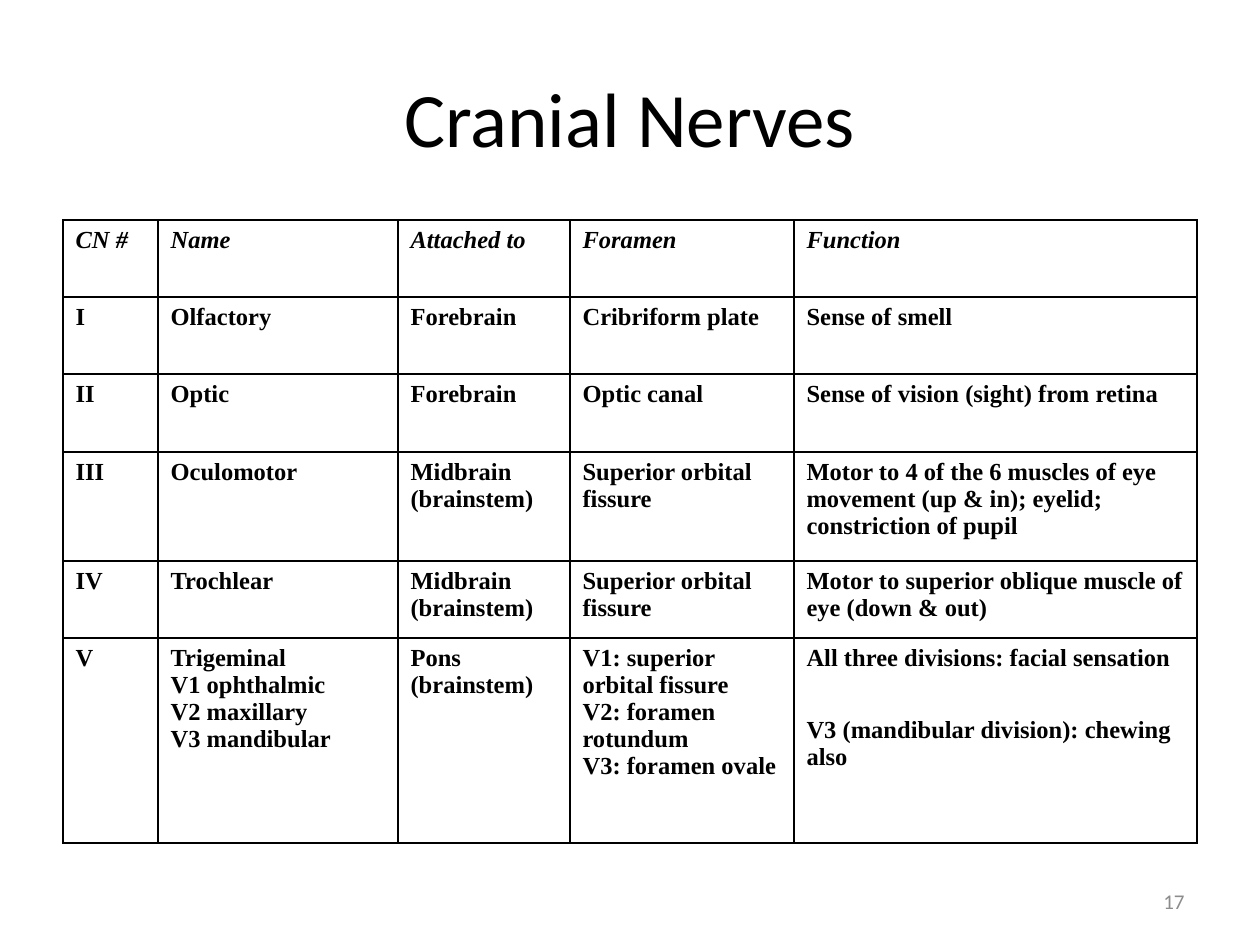
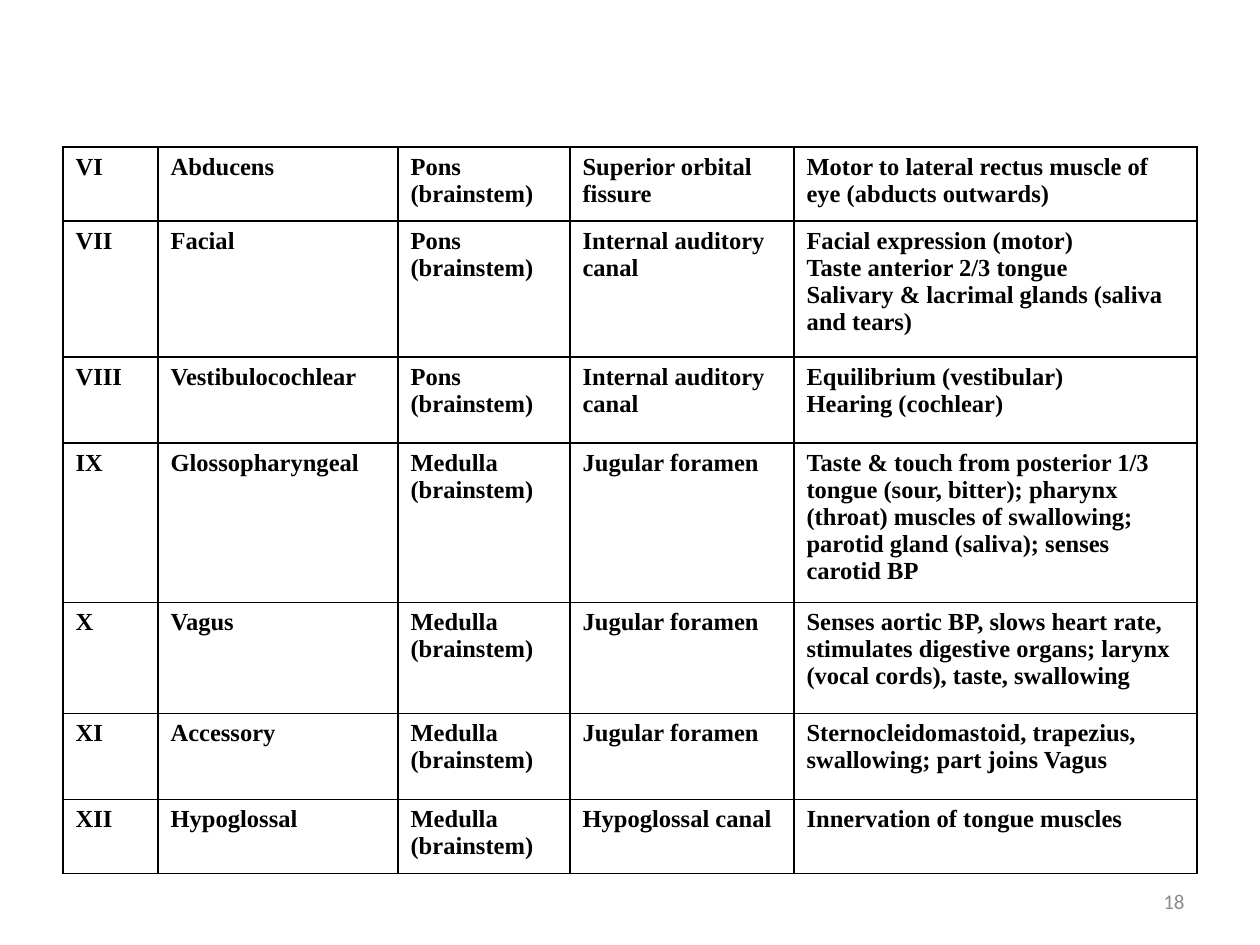
import pptx
import pptx.util
import pptx.dml.color
import pptx.enum.text
import pptx.oxml.ns
import lxml.etree

BLACK = pptx.dml.color.RGBColor(0x00, 0x00, 0x00)
GREY = pptx.dml.color.RGBColor(0x8C, 0x8C, 0x8C)
SANS = "Calibri"
SERIF = "Times New Roman"
ALIGN = pptx.enum.text.PP_ALIGN
MIDDLE = pptx.enum.text.MSO_ANCHOR.MIDDLE

SCALE = 914400 / 126  # EMU in one px
WIDE, HIGH = 1260, 945
LEFT = 63
COLS = [95, 240, 172, 224, 403]


def px(num):
    return pptx.util.Emu(round(num * SCALE))


class Deck:
    def __init__(self):
        self.show = pptx.Presentation()
        self.show.slide_width = px(WIDE)
        self.show.slide_height = px(HIGH)
        self.slide = None

    def page(self, num):
        self.slide = self.show.slides.add_slide(self.show.slide_layouts[6])
        self.text(num, (903, 876, 294, 50), 12, GREY, ALIGN.RIGHT)

    def title(self, words):
        self.text(words, (LEFT, 38, 1134, 158), 44, BLACK, ALIGN.CENTER)

    def run(self, para, words, font, size, color, bold=False, slant=False):
        run = para.add_run()
        run.text = words
        run.font.name = font
        run.font.size = pptx.util.Pt(size)
        run.font.color.rgb = color
        run.font.bold = bold
        run.font.italic = slant

    def text(self, words, place, size, color, align):
        frame = self.slide.shapes.add_textbox(*map(px, place)).text_frame
        frame.word_wrap = True
        frame.vertical_anchor = MIDDLE
        para = frame.paragraphs[0]
        para.alignment = align
        self.run(para, words, SANS, size, color)

    def border(self, cell):
        props = cell._tc.get_or_add_tcPr()
        for side in ("lnL", "lnR", "lnT", "lnB"):
            line = lxml.etree.SubElement(
                props, pptx.oxml.ns.qn("a:" + side), w="12700")
            fill = lxml.etree.SubElement(line, pptx.oxml.ns.qn("a:solidFill"))
            lxml.etree.SubElement(
                fill, pptx.oxml.ns.qn("a:srgbClr"), val=str(BLACK))

    def cell(self, cell, words, slant):
        self.border(cell)
        cell.fill.background()
        frame = cell.text_frame
        for i, line in enumerate(words.split("\n")):
            para = frame.add_paragraph() if i else frame.paragraphs[0]
            self.run(para, line, SERIF, 14, BLACK, True, slant)

    def table(self, top, highs, rows, head=False):
        """Fill a grid; a line break in a cell starts a new paragraph."""
        table = self.slide.shapes.add_table(
            len(rows), len(COLS), px(LEFT), px(top),
            px(sum(COLS)), px(sum(highs))).table
        table.first_row = head
        table.horz_banding = False
        for col, wide in zip(table.columns, COLS):
            col.width = px(wide)
        for i, (row, high) in enumerate(zip(rows, highs)):
            table.rows[i].height = px(high)
            for j, words in enumerate(row):
                self.cell(table.cell(i, j), words, head and i == 0)
        return table


# Shared cell texts
MID = "Midbrain (brainstem)"
PONS = "Pons (brainstem)"
MED = "Medulla (brainstem)"
ORBIT = "Superior orbital fissure"
JUG = "Jugular foramen"

UPPER = [
    ("CN #", "Name", "Attached to", "Foramen", "Function"),
    ("I", "Olfactory", "Forebrain", "Cribriform plate", "Sense of smell"),
    ("II", "Optic", "Forebrain", "Optic canal",
     "Sense of vision (sight) from retina"),
    ("III", "Oculomotor", MID, ORBIT,
     "Motor to 4 of the 6 muscles of eye movement (up & in); eyelid; "
     "constriction of pupil"),
    ("IV", "Trochlear", MID, ORBIT,
     "Motor to superior oblique muscle of eye (down & out)"),
    ("V", "Trigeminal\nV1 ophthalmic\nV2 maxillary\nV3 mandibular", PONS,
     "V1: superior orbital fissure\nV2: foramen rotundum\nV3: foramen ovale",
     "All three divisions: facial sensation\n"
     "V3 (mandibular division): chewing also"),
]

LOWER = [
    ("VI", "Abducens", PONS, ORBIT,
     "Motor to lateral rectus muscle of eye (abducts outwards)"),
    ("VII", "Facial", PONS, "Internal auditory canal",
     "Facial expression (motor)\nTaste anterior 2/3 tongue\n"
     "Salivary & lacrimal glands (saliva and tears)"),
    ("VIII", "Vestibulocochlear", PONS, "Internal auditory\ncanal",
     "Equilibrium (vestibular)\nHearing (cochlear)"),
    ("IX", "Glossopharyngeal", MED, JUG,
     "Taste & touch from posterior 1/3 tongue (sour, bitter); pharynx "
     "(throat) muscles of swallowing; parotid gland (saliva); senses "
     "carotid BP"),
    ("X", "Vagus", MED, JUG,
     "Senses aortic BP, slows heart rate, stimulates digestive organs; "
     "larynx (vocal cords), taste, swallowing"),
    ("XI", "Accessory", MED, JUG,
     "Sternocleidomastoid, trapezius, swallowing; part joins Vagus"),
    ("XII", "Hypoglossal", MED, "Hypoglossal canal",
     "Innervation of tongue muscles"),
]


def main():
    deck = Deck()

    # Nerves I to V
    deck.page("17")
    deck.title("Cranial Nerves")
    table = deck.table(220, [77, 77, 78, 109, 77, 205], UPPER, head=True)
    chew = table.cell(5, 4).text_frame.paragraphs[1]
    chew.space_before = pptx.util.Pt(26)

    # Nerves VI to XII
    deck.page("18")
    deck.table(147, [74, 136, 86, 148, 111, 86, 74], LOWER)

    deck.show.save("out.pptx")


if __name__ == "__main__":
    main()
